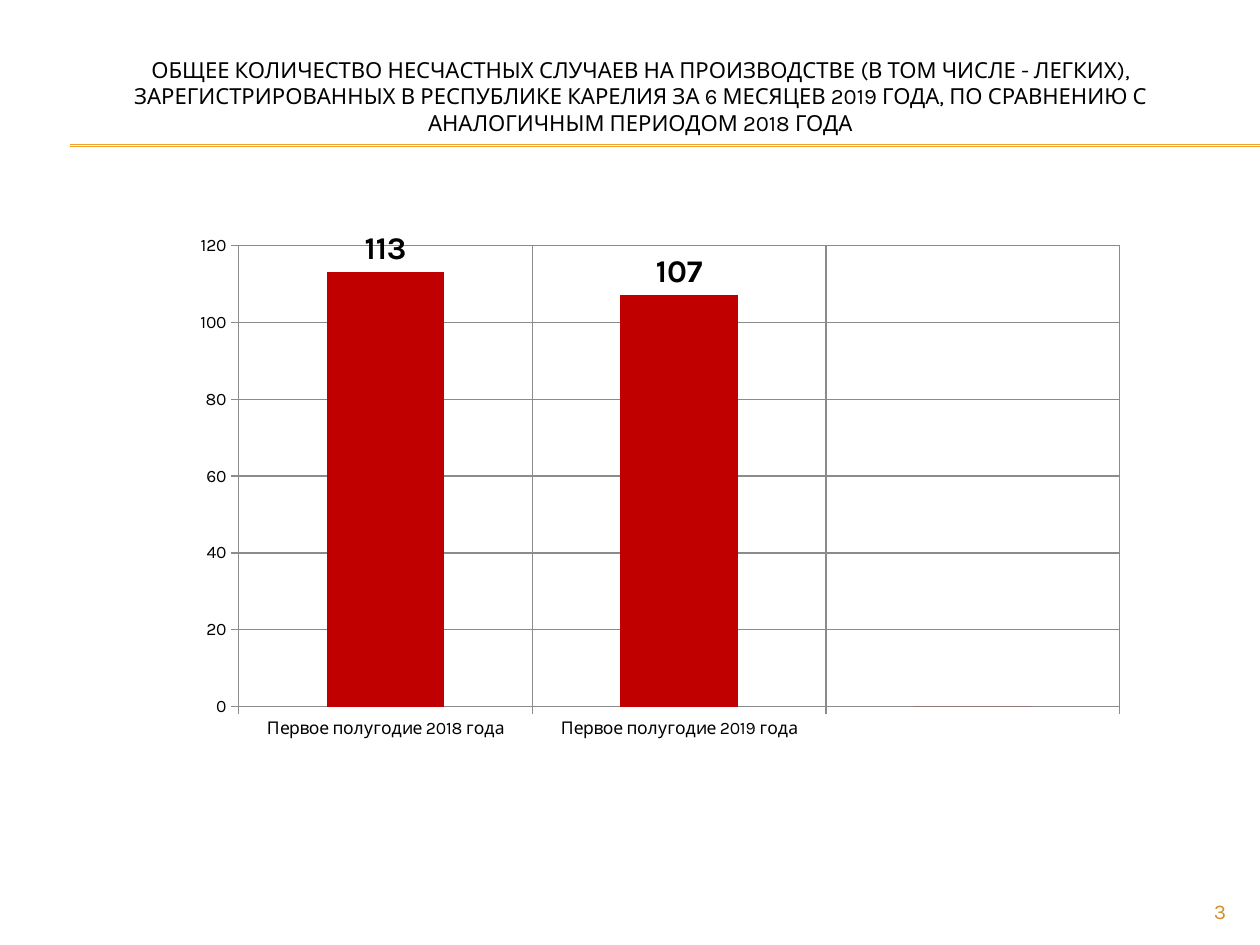
from dataclasses import dataclass

from lxml.etree import SubElement
from pptx import Presentation
from pptx.chart.data import CategoryChartData
from pptx.dml.color import RGBColor as Rgb
from pptx.enum.chart import XL_CHART_TYPE as ChartType
from pptx.enum.chart import XL_LABEL_POSITION as LabelPosition
from pptx.enum.chart import XL_TICK_MARK as TickMark
from pptx.enum.shapes import MSO_CONNECTOR as Connector
from pptx.enum.text import MSO_ANCHOR as Anchor
from pptx.enum.text import PP_ALIGN as Align
from pptx.oxml import parse_xml
from pptx.oxml.ns import nsdecls, qn
from pptx.util import Cm, Pt


@dataclass(frozen=True)
class Theme:
    """Fonts, type sizes and colours of the slide."""
    font: str = "Karla"
    ink: str = "000000"
    rule: str = "F0A22E"
    page: str = "D48F29"
    bar: str = "C00000"
    grid: str = "8B8B8B"
    title_size: float = 12.6
    page_size: float = 12
    axis_size: float = 10
    value_size: float = 18


THEME = Theme()
TITLE = (
    "ОБЩЕЕ КОЛИЧЕСТВО НЕСЧАСТНЫХ СЛУЧАЕВ НА ПРОИЗВОДСТВЕ (В ТОМ ЧИСЛЕ - ЛЕГКИХ), "
    "ЗАРЕГИСТРИРОВАННЫХ В РЕСПУБЛИКЕ КАРЕЛИЯ ЗА 6 МЕСЯЦЕВ 2019 ГОДА, "
    "ПО СРАВНЕНИЮ С АНАЛОГИЧНЫМ ПЕРИОДОМ 2018 ГОДА"
)
ACCIDENTS = {
    "Первое полугодие 2018 года": 113,
    "Первое полугодие 2019 года": 107,
    "": 0,
}
PLOT_AREA = {"x": 0.17, "y": 0.05, "w": 0.76, "h": 0.74}


def style_font(font, size, color=THEME.ink, bold=False):
    """Apply the theme typeface with a size, colour and weight."""
    font.name = THEME.font
    font.size = Pt(size)
    font.bold = bold
    font.color.rgb = Rgb.from_string(color)


def add_text(slide, text, *, left, top, width, height, size, color, align, anchor):
    """Place one wrapped paragraph of text."""
    frame = slide.shapes.add_textbox(Cm(left), Cm(top), Cm(width), Cm(height)).text_frame
    frame.word_wrap = True
    frame.vertical_anchor = anchor
    paragraph = frame.paragraphs[0]
    paragraph.alignment = align
    run = paragraph.add_run()
    run.text = text
    style_font(run.font, size, color)


def add_rule(slide, top):
    """Draw a thin rule from the left margin to the slide edge."""
    rule = slide.shapes.add_connector(Connector.STRAIGHT, Cm(1.42), Cm(top), Cm(25.4), Cm(top))
    rule.line.color.rgb = Rgb.from_string(THEME.rule)
    rule.line.width = Pt(0.75)
    SubElement(rule.element.spPr, qn("a:effectLst"))


def style_axis(axis):
    """Give an axis its grid, ticks and line colour."""
    axis.has_major_gridlines = True
    axis.major_tick_mark = TickMark.CROSS
    axis.minor_tick_mark = TickMark.NONE
    for line in (axis.format.line, axis.major_gridlines.format.line):
        line.color.rgb = Rgb.from_string(THEME.grid)
        line.width = Pt(0.75)


def fix_plot_area(chart):
    """Set the inner plot area as fractions of the chart."""
    plot_area = chart.element.find(qn("c:chart")).find(qn("c:plotArea"))
    for automatic in plot_area.findall(qn("c:layout")):
        plot_area.remove(automatic)
    modes = "".join(f'<c:{side}Mode val="edge"/>' for side in "xy")
    sizes = "".join(f'<c:{side} val="{share}"/>' for side, share in PLOT_AREA.items())
    plot_area.insert(0, parse_xml(
        f'<c:layout {nsdecls("c")}><c:manualLayout><c:layoutTarget val="inner"/>'
        f"{modes}{sizes}</c:manualLayout></c:layout>"
    ))


def add_accident_chart(slide):
    """Add the column chart of accidents per half-year."""
    accident_data = CategoryChartData()
    accident_data.categories = list(ACCIDENTS)
    accident_data.add_series("Series 1", list(ACCIDENTS.values()))
    chart = slide.shapes.add_chart(
        ChartType.COLUMN_CLUSTERED, Cm(0.84), Cm(4.32), Cm(23.37), Cm(12.57), accident_data
    ).chart
    chart.has_legend = False
    chart.has_title = False
    style_font(chart.font, THEME.axis_size)
    for axis in (chart.category_axis, chart.value_axis):
        style_axis(axis)
    chart.value_axis.minimum_scale = 0
    chart.value_axis.maximum_scale = 120
    chart.value_axis.major_unit = 20

    columns = chart.plots[0]
    columns.vary_by_categories = False
    columns.gap_width = 150
    accidents = columns.series[0]
    accidents.format.fill.solid()
    accidents.format.fill.fore_color.rgb = Rgb.from_string(THEME.bar)
    labels = accidents.data_labels
    labels.show_value = True
    labels.position = LabelPosition.OUTSIDE_END
    labels.number_format = "0;;"
    labels.number_format_is_linked = False
    style_font(labels.font, THEME.value_size, bold=True)
    fix_plot_area(chart)


def main():
    """Build and save the slide."""
    deck = Presentation()
    deck.slide_width, deck.slide_height = Cm(25.4), Cm(19.05)
    slide = deck.slides.add_slide(deck.slide_layouts[6])
    for top in (2.92, 2.95):
        add_rule(slide, top)
    add_text(slide, TITLE, left=0.84, top=1.27, width=24.13, height=1.32,
             size=THEME.title_size, color=THEME.ink, align=Align.CENTER, anchor=Anchor.MIDDLE)
    add_text(slide, "3", left=22.86, top=17.98, width=2.11, height=0.69,
             size=THEME.page_size, color=THEME.page, align=Align.RIGHT, anchor=Anchor.TOP)
    add_accident_chart(slide)
    deck.save("out.pptx")


if __name__ == "__main__":
    main()
